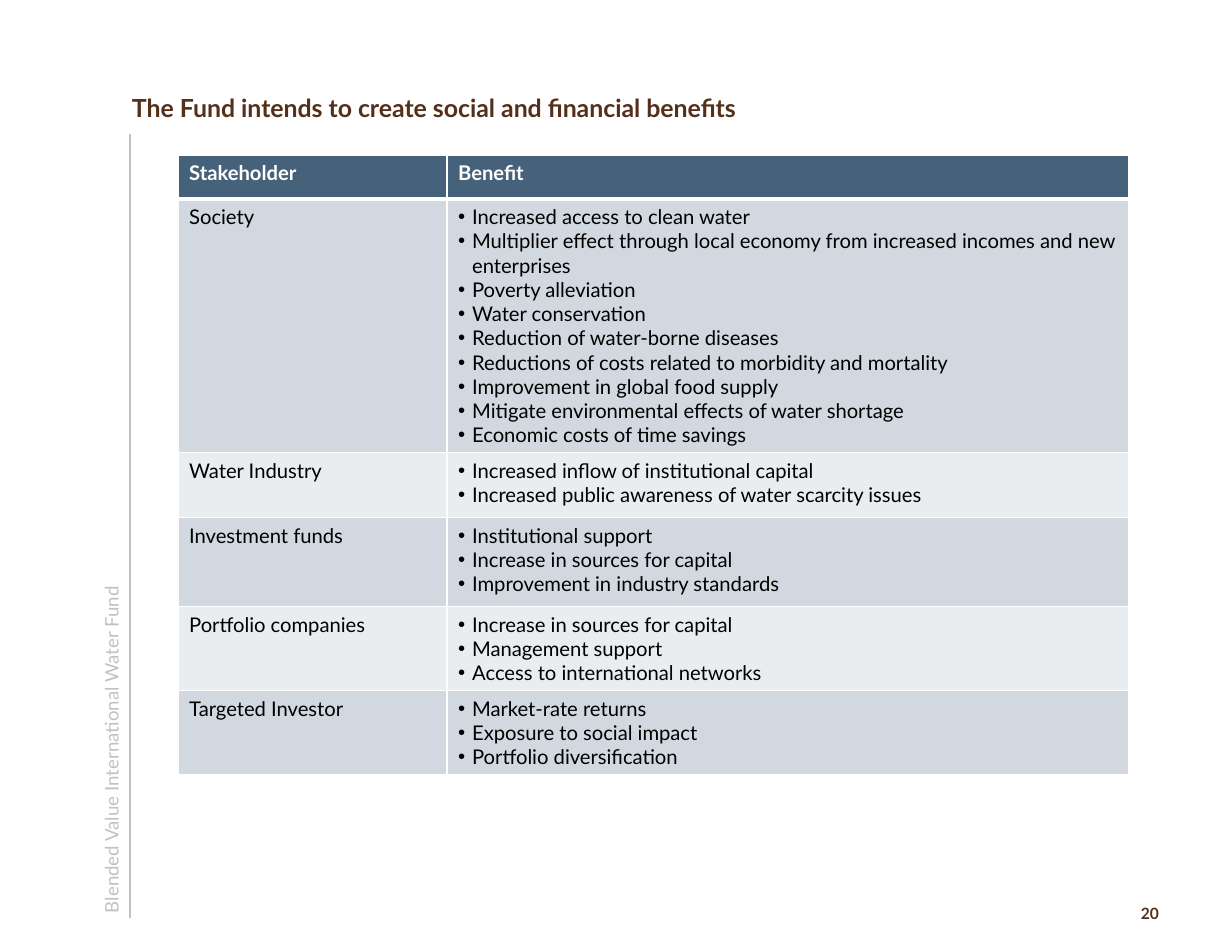
from lxml.etree import SubElement
from pptx import Presentation
from pptx.dml.color import RGBColor
from pptx.enum.shapes import MSO_CONNECTOR as Connector
from pptx.enum.text import MSO_ANCHOR as Anchor, MSO_AUTO_SIZE as AutoSize
from pptx.oxml.ns import qn
from pptx.util import Pt

PX = 914400 // 112
FONT = "Lato"
COLORS = {
    "brown": "54301A",
    "gray": "C1C1BD",
    "header": "46627B",
    "dark_band": "D2D8E0",
    "light_band": "EAEDF0",
    "white": "FFFFFF",
    "black": "000000",
}
COLUMN_WIDTHS = (269, 682)
HEADER_HEIGHT = 44
HEADINGS = ("Stakeholder", "Benefit")
STAKEHOLDERS = (
    ("Society", 253, (
        "Increased access to clean water",
        "Multiplier effect through local economy from increased incomes and new enterprises",
        "Poverty alleviation",
        "Water conservation",
        "Reduction of water-borne diseases",
        "Reductions of costs related to morbidity and mortality",
        "Improvement in global food supply",
        "Mitigate environmental effects of water shortage",
        "Economic costs of time savings",
    )),
    ("Water Industry", 65, (
        "Increased inflow of institutional capital",
        "Increased public awareness of water scarcity issues",
    )),
    ("Investment funds", 89, (
        "Institutional support",
        "Increase in sources for capital",
        "Improvement in industry standards",
    )),
    ("Portfolio companies", 84, (
        "Increase in sources for capital",
        "Management support",
        "Access to international networks",
    )),
    ("Targeted Investor", 84, (
        "Market-rate returns",
        "Exposure to social impact",
        "Portfolio diversification",
    )),
)


def px(*lengths):
    """Turn pixel lengths into EMU."""
    return [length * PX for length in lengths]


def color(name):
    """Look up a named colour."""
    return RGBColor.from_string(COLORS[name])


def write(frame, lines, size=13, ink="black", bold=False, bullet=False):
    """Fill a text frame with one formatted paragraph per line."""
    for index, line in enumerate(lines):
        paragraph = frame.paragraphs[0] if index == 0 else frame.add_paragraph()
        run = paragraph.add_run()
        run.text = line
        run.font.name = FONT
        run.font.size = Pt(size)
        run.font.bold = bold
        run.font.color.rgb = color(ink)
        if bullet:
            properties = paragraph._p.get_or_add_pPr()
            properties.set("marL", str(14 * PX))
            properties.set("indent", str(-14 * PX))
            SubElement(properties, qn("a:buFont"), typeface="Arial")
            SubElement(properties, qn("a:buChar"), char="•")


def add_text(slide, box, text, margins=(0, 0, 0, 0), anchor=Anchor.TOP, **text_format):
    """Add a wrapping text box."""
    shape = slide.shapes.add_textbox(*px(*box))
    frame = shape.text_frame
    frame.word_wrap = True
    frame.auto_size = AutoSize.NONE
    frame.vertical_anchor = anchor
    (frame.margin_left, frame.margin_top,
     frame.margin_right, frame.margin_bottom) = px(*margins)
    write(frame, [text], **text_format)
    return shape


def set_border(cell, side, width):
    """Give one side of a cell a white border."""
    line = SubElement(cell._tc.get_or_add_tcPr(), qn(f"a:ln{side}"), w=str(Pt(width)))
    fill = SubElement(line, qn("a:solidFill"))
    SubElement(fill, qn("a:srgbClr"), val=COLORS["white"])


def fill_cell(cell, lines, band, top=1, bottom=1, **text_format):
    """Write, border and colour one cell."""
    write(cell.text_frame, lines, **text_format)
    for side, width in (("L", 1), ("R", 1), ("T", top), ("B", bottom)):
        set_border(cell, side, width)
    cell.fill.solid()
    cell.fill.fore_color.rgb = color(band)


def add_benefit_table(slide, left, top):
    """Add the table of benefits by stakeholder."""
    heights = [HEADER_HEIGHT] + [height for _, height, _ in STAKEHOLDERS]
    table = slide.shapes.add_table(
        len(heights), len(COLUMN_WIDTHS),
        *px(left, top, sum(COLUMN_WIDTHS), sum(heights))).table
    for column, width in zip(table.columns, px(*COLUMN_WIDTHS)):
        column.width = width
    for row, height in zip(table.rows, px(*heights)):
        row.height = height
    for column, heading in enumerate(HEADINGS):
        fill_cell(table.cell(0, column), [heading], "header", bottom=3,
                  ink="white", bold=True)
    for row, (stakeholder, _, benefits) in enumerate(STAKEHOLDERS, 1):
        band = "dark_band" if row % 2 else "light_band"
        top_border = 3 if row == 1 else 1
        fill_cell(table.cell(row, 0), [stakeholder], band, top=top_border)
        fill_cell(table.cell(row, 1), benefits, band, top=top_border, bullet=True)


def add_sidebar(slide, left, top, height):
    """Add the vertical fund name and the rule to its right."""
    rule_x = left + 30
    rule = slide.shapes.add_connector(
        Connector.STRAIGHT, *px(rule_x, top + height, rule_x, top))
    rule.line.color.rgb = color("gray")
    rule.line.width = Pt(0.75)
    SubElement(rule._element.spPr, qn("a:effectLst"))
    length, thickness = 620, 22
    center_x, center_y = left + 11, top + height - 1 - length // 2
    name = add_text(
        slide, (center_x - length // 2, center_y - thickness // 2, length, thickness),
        "Blended Value International Water Fund", margins=(4, 0, 0, 0),
        size=12, ink="gray")
    name.rotation = 270


def main():
    """Build and save the slide."""
    presentation = Presentation()
    presentation.slide_width, presentation.slide_height = px(1232, 952)
    slide = presentation.slides.add_slide(presentation.slide_layouts[6])
    add_sidebar(slide, 100, 134, 784)
    add_text(slide, (1130, 898, 43, 30), "20", margins=(11, 6, 11, 6),
             size=10, ink="brown", bold=True)
    add_text(slide, (132, 38, 1020, 84),
             "The Fund intends to create social and financial benefits",
             anchor=Anchor.BOTTOM, size=16, ink="brown", bold=True)
    add_benefit_table(slide, 178, 155)
    presentation.save("out.pptx")


if __name__ == "__main__":
    main()
